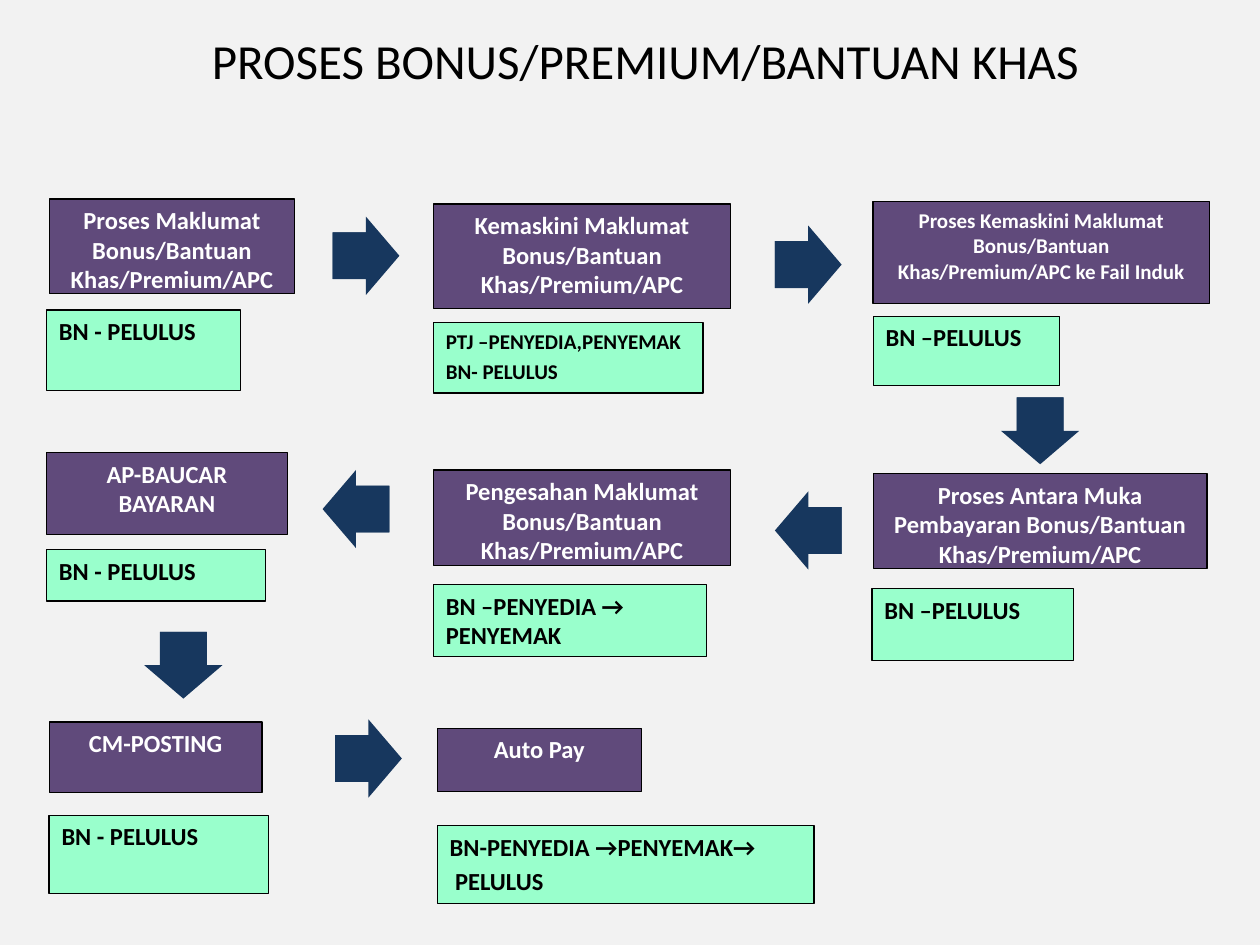
"""Build the bonus, premium and special aid process flow slide."""
from pptx import Presentation
from pptx.dml.color import RGBColor
from pptx.enum import shapes, text
from pptx.util import Inches, Pt

FONT = "Calibri"
BLACK, WHITE, NAVY = "000000", "FFFFFF", "17375E"
PURPLE, MINT, GREY = "604A7B", "99FFCC", "F2F2F2"

TITLE = "PROSES BONUS/PREMIUM/BANTUAN KHAS"
STEPS = [
    ("Proses Maklumat Bonus/Bantuan Khas/Premium/APC", 14, (0.39, 1.58, 1.95, 0.75),
     ["BN - PELULUS"], 14, (0.37, 2.46, 1.54, 0.64)),
    ("Kemaskini Maklumat Bonus/Bantuan Khas/Premium/APC", 14, (3.44, 1.62, 2.36, 0.83),
     ["PTJ –PENYEDIA,PENYEMAK", "BN- PELULUS"], 12, (3.44, 2.56, 2.14, 0.56)),
    ("Proses Kemaskini Maklumat Bonus/Bantuan Khas/Premium/APC ke Fail Induk", 12,
     (6.93, 1.6, 2.67, 0.81), ["BN –PELULUS"], 14, (6.93, 2.51, 1.48, 0.55)),
    ("Proses Antara Muka Pembayaran Bonus/Bantuan Khas/Premium/APC", 14,
     (6.93, 3.76, 2.65, 0.75), ["BN –PELULUS"], 14, (6.92, 4.67, 1.6, 0.57)),
    ("Pengesahan Maklumat Bonus/Bantuan Khas/Premium/APC", 14, (3.44, 3.73, 2.36, 0.76),
     ["BN –PENYEDIA → PENYEMAK"], 14, (3.44, 4.64, 2.17, 0.57)),
    ("AP-BAUCAR BAYARAN", 14, (0.37, 3.59, 1.91, 0.65),
     ["BN - PELULUS"], 14, (0.37, 4.36, 1.74, 0.41)),
    ("CM-POSTING", 14, (0.39, 5.73, 1.69, 0.56),
     ["BN - PELULUS"], 14, (0.39, 6.47, 1.74, 0.62)),
    ("Auto Pay", 14, (3.47, 5.78, 1.62, 0.5),
     ["BN-PENYEDIA →PENYEMAK→", " PELULUS"], 14, (3.47, 6.55, 2.99, 0.62)),
]
RIGHT, DOWN, LEFT = 0, 90, 180
ARROWS = [(2.64, 1.72, RIGHT), (6.15, 1.79, RIGHT), (7.99, 3.11, DOWN),
          (6.15, 3.9, LEFT), (2.56, 3.73, LEFT), (1.19, 4.97, DOWN),
          (2.66, 5.71, RIGHT)]
ARROW_W, ARROW_H, SHAFT = 0.53, 0.62, 0.37


def rgb(color):
    return RGBColor.from_string(color)


def add_solid(parent, preset, place, fill):
    solid = parent.add_shape(preset, *map(Inches, place))
    solid.shadow.inherit = False
    solid.fill.solid()
    solid.fill.fore_color.rgb = rgb(fill)
    solid.line.fill.background()
    return solid


def write(frame, lines, size, color, align, bold=True, before=0.2):
    frame.word_wrap = True
    frame.vertical_anchor = text.MSO_ANCHOR.TOP
    for number, line in enumerate(lines):
        paragraph = frame.add_paragraph() if number else frame.paragraphs[0]
        paragraph.text = line
        paragraph.alignment = align
        paragraph.space_before = Pt(size * before)
        font = paragraph.font
        font.name, font.size, font.bold = FONT, Pt(size), bold
        font.color.rgb = rgb(color)


def add_box(parent, lines, size, place, fill, color, align):
    box = add_solid(parent, shapes.MSO_SHAPE.RECTANGLE, place, fill)
    box.line.color.rgb = rgb(BLACK)
    box.line.width = Pt(0.75)
    write(box.text_frame, lines, size, color, align)


def add_arrow(parent, left, top, turn):
    group = parent.add_group_shape()
    arrow = add_solid(group.shapes, shapes.MSO_SHAPE.RIGHT_ARROW,
                      (left, top, ARROW_W, ARROW_H), NAVY)
    arrow.adjustments[0], arrow.adjustments[1] = 0.6, 0.5
    shaft_top = top + (ARROW_H - SHAFT) / 2
    add_solid(group.shapes, shapes.MSO_SHAPE.RECTANGLE,
              (left, shaft_top, SHAFT, SHAFT), NAVY)
    group.rotation = turn


def main():
    deck = Presentation()
    deck.slide_width, deck.slide_height = Inches(10), Inches(7.5)
    slide = deck.slides.add_slide(deck.slide_layouts[6])
    slide.background.fill.solid()
    slide.background.fill.fore_color.rgb = rgb(GREY)
    center, left = text.PP_ALIGN.CENTER, text.PP_ALIGN.LEFT

    for step, step_size, step_place, roles, role_size, role_place in STEPS:
        add_box(slide.shapes, [step], step_size, step_place, PURPLE, WHITE, center)
        add_box(slide.shapes, roles, role_size, role_place, MINT, BLACK, left)

    title = slide.shapes.add_textbox(*map(Inches, (1.38, 0.19, 7.48, 0.57)))
    write(title.text_frame, [TITLE], 28, BLACK, center, bold=False, before=0)

    for arrow in ARROWS:
        add_arrow(slide.shapes, *arrow)
    deck.save("out.pptx")


if __name__ == "__main__":
    main()
